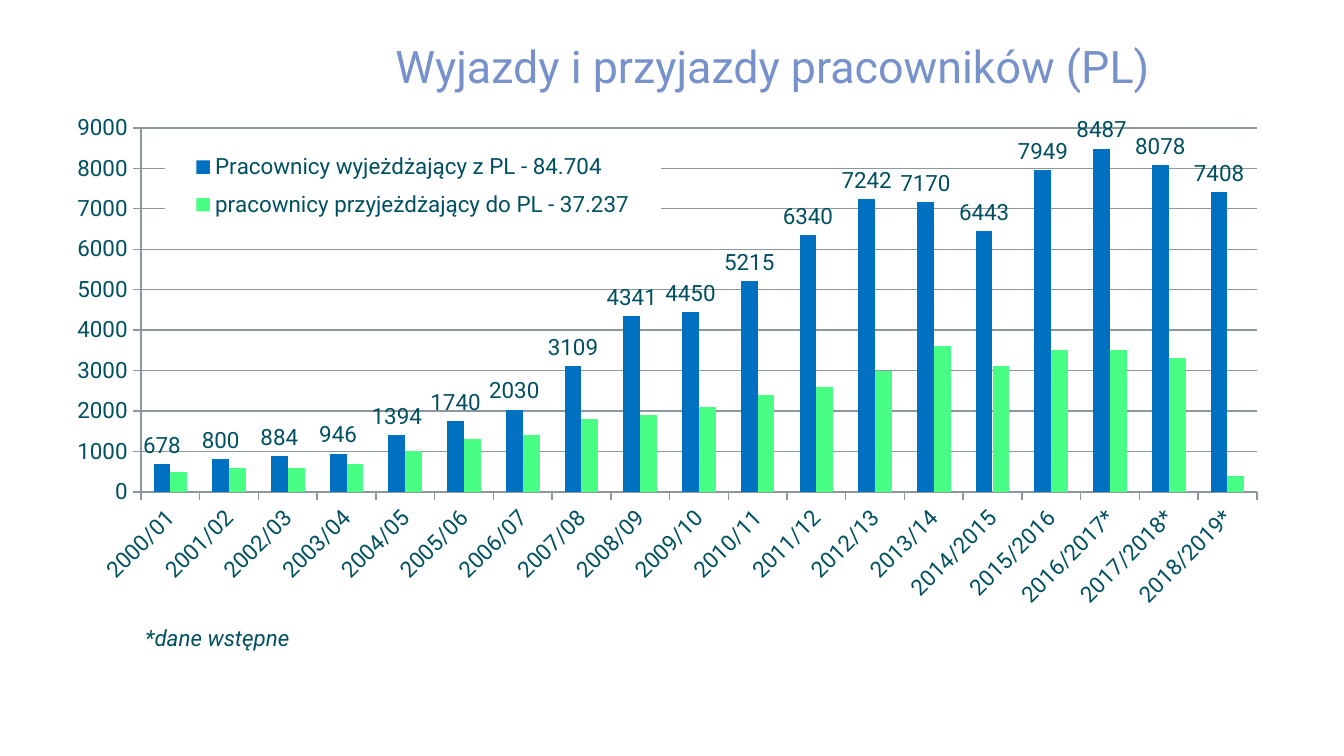
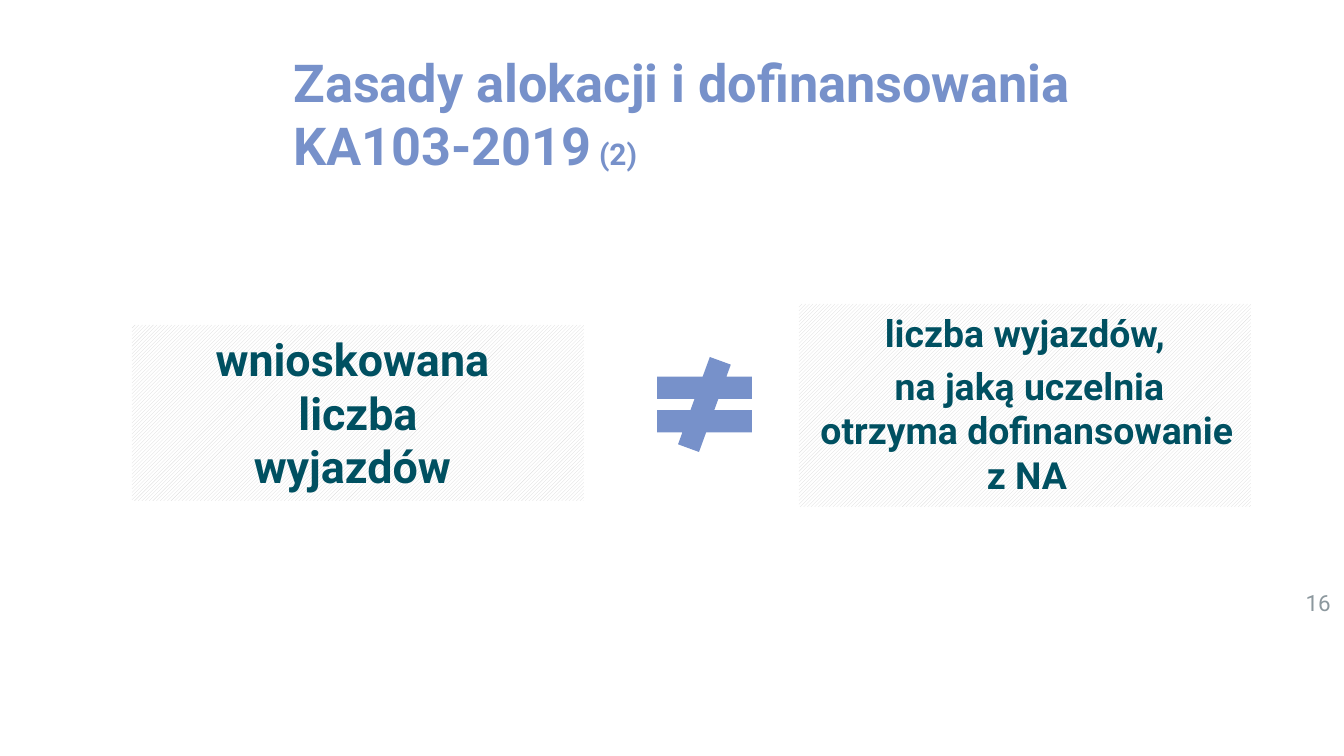
from pptx import Presentation, util as u
from pptx.chart.data import CategoryChartData
from pptx.dml.color import RGBColor
from pptx.enum import chart as ch, dml, shapes, text

PX = 914400 / 134.4
FONT = "Roboto"
COLORS = {
    "title": "7791CA", "text": "005061", "muted": "8C989E", "white": "FFFFFF",
    "hatch": "D9D9D9", "outgoing": "0070C0", "incoming": "48FE85",
}
ALIGN = text.PP_ALIGN

YEARS = [f"{y}/{(y + 1) % 100:02d}" for y in range(2000, 2014)]
YEARS += [f"{y}/{y + 1}" for y in (2014, 2015)]
YEARS += [f"{y}/{y + 1}*" for y in (2016, 2017, 2018)]
STAFF = [
    ("Pracownicy wyjeżdżający z PL - 84.704", "outgoing",
     [678, 800, 884, 946, 1394, 1740, 2030, 3109, 4341, 4450, 5215, 6340,
      7242, 7170, 6443, 7949, 8487, 8078, 7408]),
    ("pracownicy przyjeżdżający do PL - 37.237", "incoming",
     [500, 600, 600, 700, 1000, 1300, 1400, 1800, 1900, 2100, 2400, 2600,
      3000, 3600, 3100, 3500, 3500, 3300, 400]),
]


def px(*lengths):
    return [u.Emu(round(n * PX)) for n in lengths]


def rgb(name):
    return RGBColor.from_string(COLORS[name])


def style(font, size, color, bold=False, italic=False):
    font.name, font.size, font.color.rgb = FONT, u.Pt(size), rgb(color)
    font.bold, font.italic = bold, italic


def fill_text(sp, paragraphs, size, color, align=ALIGN.LEFT, gap=0, hang=0,
              anchor=text.MSO_ANCHOR.TOP, **look):
    """Write one string per paragraph; gap is the space between paragraphs."""
    tf = sp.text_frame
    tf.word_wrap = True
    tf.auto_size = text.MSO_AUTO_SIZE.NONE
    tf.vertical_anchor = anchor
    for i, line in enumerate(paragraphs):
        p = tf.add_paragraph() if i else tf.paragraphs[0]
        p.text = line
        p.alignment = align
        if i:
            p.space_before = u.Pt(gap)
        if hang:
            indent, = px(hang)
            p_pr = p._p.get_or_add_pPr()
            p_pr.set("marL", str(int(indent)))
            p_pr.set("indent", str(-int(indent)))
        for r in p.runs:
            style(r.font, size, color, **look)


def add_slide(prs, title, box, size, align=ALIGN.LEFT, bold=False):
    s = prs.slides.add_slide(prs.slide_layouts[5])
    sp = s.shapes.title
    sp.left, sp.top, sp.width, sp.height = px(*box)
    fill_text(sp, [title], size, "title", align,
              anchor=text.MSO_ANCHOR.MIDDLE, bold=bold)
    return s


def add_label(s, box, label, size, color, **look):
    sp = s.shapes.add_textbox(*px(*box))
    fill_text(sp, [label], size, color, **look)


def add_shape(s, kind, box):
    sp = s.shapes.add_shape(kind, *px(*box))
    sp.shadow.inherit = False
    sp.line.fill.background()
    return sp


def add_hatched_box(s, box, paragraphs, size, hang=0):
    sp = add_shape(s, shapes.MSO_SHAPE.RECTANGLE, box)
    sp.fill.patterned()
    sp.fill.pattern = dml.MSO_PATTERN.DARK_UPWARD_DIAGONAL
    sp.fill.fore_color.rgb = rgb("hatch")
    sp.fill.back_color.rgb = rgb("white")
    fill_text(sp, paragraphs, size, "text", ALIGN.CENTER, gap=4, hang=hang,
              bold=True)


def set_layout(parent, chart_box, box, inner=False):
    """Place a plot area or legend, given in slide px, inside the chart."""
    left, top, width, height = chart_box
    x, y, w, h = box
    ns = parent.tag.split("}")[0] + "}"
    layout = parent.find(ns + "layout")
    if layout is None:
        layout = parent.makeelement(ns + "layout", {})
        parent.insert(0, layout)
    for child in list(layout):
        layout.remove(child)
    manual = layout.makeelement(ns + "manualLayout", {})
    layout.append(manual)
    values = [("layoutTarget", "inner")] if inner else []
    values += [("xMode", "edge"), ("yMode", "edge"),
               ("x", (x - left) / width), ("y", (y - top) / height),
               ("w", w / width), ("h", h / height)]
    for tag, value in values:
        manual.append(manual.makeelement(ns + tag, {"val": str(value)}))


def style_axis(axis):
    axis.major_tick_mark = ch.XL_TICK_MARK.OUTSIDE
    axis.minor_tick_mark = ch.XL_TICK_MARK.NONE
    axis.format.line.color.rgb = rgb("muted")
    style(axis.tick_labels.font, 12, "text")


def add_staff_chart(s, box, plot_box, legend_box):
    data = CategoryChartData(number_format="0")
    data.categories = YEARS
    for name, _, values in STAFF:
        data.add_series(name, values)
    chart = s.shapes.add_chart(
        ch.XL_CHART_TYPE.COLUMN_CLUSTERED, *px(*box), data).chart
    chart.has_title = False
    style(chart.font, 10, "text")

    # Columns
    plot = chart.plots[0]
    plot.gap_width, plot.overlap, plot.vary_by_categories = 150, 0, False
    for series, (_, color, _) in zip(plot.series, STAFF):
        series.format.fill.solid()
        series.format.fill.fore_color.rgb = rgb(color)
    labels = plot.series[0].data_labels
    labels.show_value = True
    labels.position = ch.XL_LABEL_POSITION.OUTSIDE_END
    style(labels.font, 12, "text")

    # Axes
    style_axis(chart.category_axis)
    chart.category_axis._element.txPr.bodyPr.set("rot", "-2700000")
    axis = chart.value_axis
    style_axis(axis)
    axis.minimum_scale, axis.maximum_scale, axis.major_unit = 0, 9000, 1000
    axis.has_major_gridlines = True
    axis.major_gridlines.format.line.color.rgb = rgb("muted")
    set_layout(chart._chartSpace.chart.plotArea, box, plot_box, inner=True)

    # Legend on a white ground inside the plot
    chart.has_legend = True
    legend = chart.legend
    legend.position = ch.XL_LEGEND_POSITION.RIGHT
    legend.include_in_layout = True
    style(legend.font, 12, "text")
    el = legend._element
    set_layout(el, box, legend_box)
    sp_pr = el.makeelement(el.tag.replace("legend", "spPr"), {})
    a = "{http://schemas.openxmlformats.org/drawingml/2006/main}"
    ground = sp_pr.makeelement(a + "solidFill", {})
    ground.append(ground.makeelement(a + "srgbClr", {"val": COLORS["white"]}))
    sp_pr.append(ground)
    el.find("{*}txPr").addprevious(sp_pr)


def staff_slide(prs):
    s = add_slide(prs, "Wyjazdy i przyjazdy pracowników (PL)",
                  (270, 29, 1005, 74), 24, ALIGN.CENTER)
    add_staff_chart(s, (16, 113, 1302, 530), plot_box=(141, 128, 1116, 364),
                    legend_box=(165, 143, 496, 86))
    add_label(s, (132, 618, 423, 40), "*dane wstępne", 12, "text", italic=True)


def allocation_slide(prs):
    s = add_slide(prs, "Zasady alokacji i dofinansowania \vKA103-2019",
                  (280, 39, 1038, 148), 28, bold=True)
    r = s.shapes.title.text_frame.paragraphs[0].add_run()
    r.text = " (2)"
    style(r.font, 16, "title", bold=True)

    # Requested trips differ from funded trips
    add_hatched_box(s, (132, 325, 452, 176),
                    ["wnioskowana \vliczba\vwyjazdów "], 24)
    add_hatched_box(s, (799, 304, 452, 203),
                    ["liczba wyjazdów,",
                     " na jaką uczelnia otrzyma dofinansowanie z NA"], 20, hang=4)
    sign = add_shape(s, shapes.MSO_SHAPE.MATH_NOT_EQUAL, (640, 357, 129, 95))
    sign.fill.solid()
    sign.fill.fore_color.rgb = rgb("title")

    # Slide number
    add_label(s, (1226, 589, 118, 27), "16", 12, "muted", align=ALIGN.RIGHT,
              anchor=text.MSO_ANCHOR.MIDDLE)


def main():
    prs = Presentation()
    prs.slide_width, prs.slide_height = px(1344, 756)
    staff_slide(prs)
    allocation_slide(prs)
    prs.save("out.pptx")


if __name__ == "__main__":
    main()
